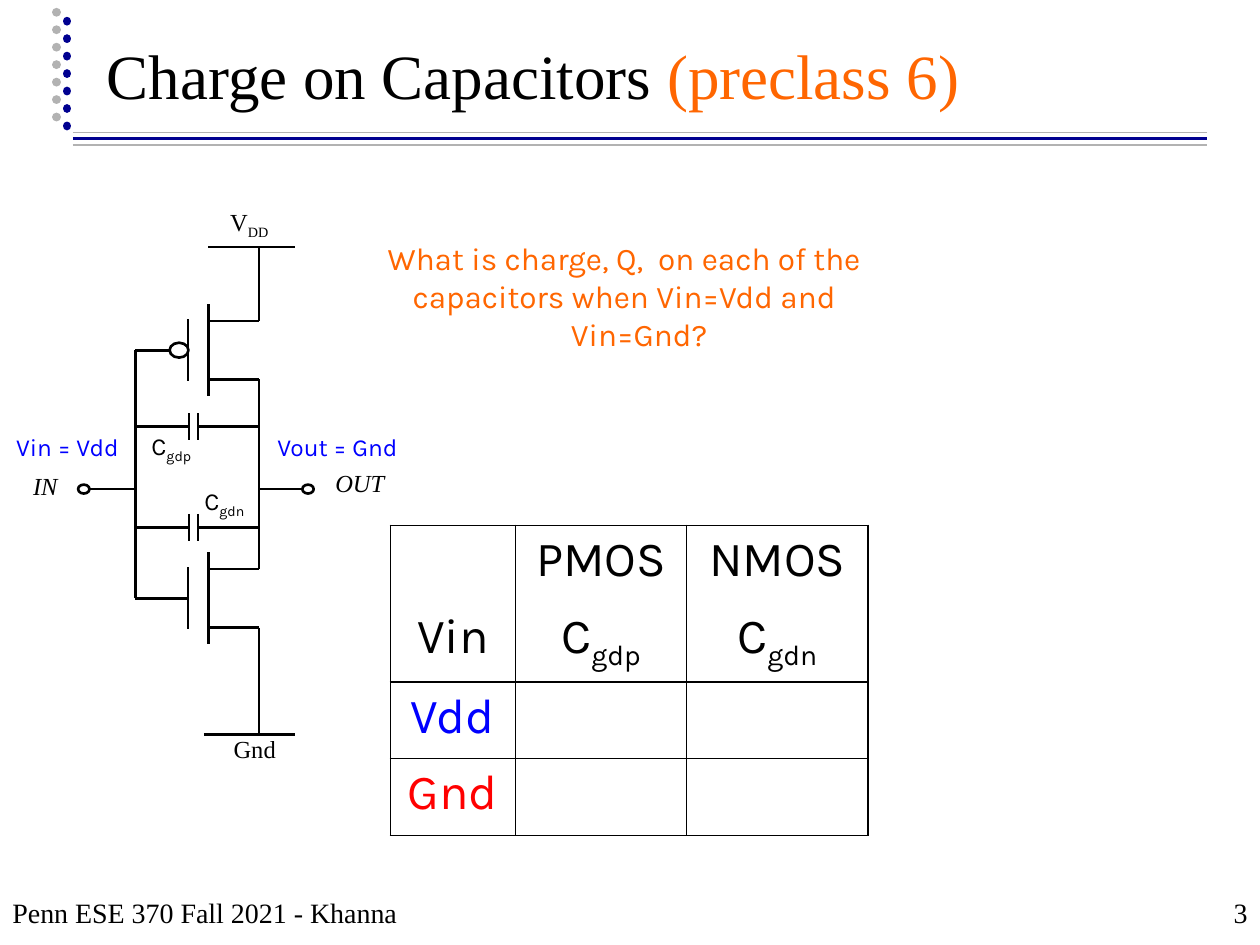
from dataclasses import dataclass

from lxml import etree
from pptx import Presentation
from pptx.dml.color import RGBColor
from pptx.enum.dml import MSO_LINE
from pptx.enum.shapes import MSO_CONNECTOR, MSO_SHAPE
from pptx.enum.text import MSO_ANCHOR, PP_ALIGN
from pptx.oxml import parse_xml
from pptx.oxml.ns import nsdecls, qn
from pptx.util import Cm, Pt

STRAIGHT = MSO_CONNECTOR.STRAIGHT
OVAL = MSO_SHAPE.OVAL
DOTS = MSO_LINE.ROUND_DOT
LEFT, MID, RIGHT = PP_ALIGN.LEFT, PP_ALIGN.CENTER, PP_ALIGN.RIGHT
TOP, BOTTOM = MSO_ANCHOR.TOP, MSO_ANCHOR.BOTTOM


@dataclass(frozen=True)
class Theme:
    serif: str = "Times New Roman"
    sans: str = "Karla"
    black: str = "000000"
    white: str = "FFFFFF"
    orange: str = "FF6601"
    blue: str = "0000FF"
    red: str = "FF0000"
    navy: str = "000090"
    gray: str = "B2B2B2"
    head: int = 36
    cell: int = 28
    body: int = 18
    foot: int = 16
    label: int = 14
    wire: float = 1.5


class Board:
    """Style plus the shape tree (slide or group) now being drawn on."""

    def __init__(self, theme, slide):
        self.theme, self.slide, self.shapes = theme, slide, slide.shapes

    def group(self):
        self.shapes = self.slide.shapes.add_group_shape().shapes

    def ungroup(self):
        self.shapes = self.slide.shapes

    def run(self, para, text, size, font=None, color=None, italic=False, sub=False):
        run = para.add_run()
        run.text = text
        run.font.size = Pt(size)
        run.font.name = font or self.theme.serif
        run.font.italic = italic
        run.font.color.rgb = RGBColor.from_string(color or self.theme.black)
        if sub:
            run.font._element.set("baseline", "-25000")

    def title(self, box, parts):
        shape = self.slide.shapes.title
        shape.left, shape.top, shape.width, shape.height = map(Cm, box)
        frame = shape.text_frame
        frame.vertical_anchor = BOTTOM
        para = frame.paragraphs[0]
        para.alignment = LEFT
        for text, color in parts:
            self.run(para, text, self.theme.head, color=color)

    def text(self, box, text, size, align=MID, anchor=TOP, wrap=True, sub="", **style):
        frame = self.shapes.add_textbox(*map(Cm, box)).text_frame
        frame.word_wrap = wrap
        frame.vertical_anchor = anchor
        para = frame.paragraphs[0]
        para.alignment = align
        self.run(para, text, size, **style)
        if sub:
            self.run(para, sub, size, sub=True, **style)
        return frame

    def line(self, x1, y1, x2, y2, color=None, width=None, dots=False):
        wire = self.shapes.add_connector(STRAIGHT, Cm(x1), Cm(y1), Cm(x2), Cm(y2))
        wire.line.color.rgb = RGBColor.from_string(color or self.theme.black)
        wire.line.width = Pt(width or self.theme.wire)
        if dots:
            wire.line.dash_style = DOTS
            wire.line._ln.set("cap", "rnd")
        etree.SubElement(wire._element.spPr, qn("a:effectLst"))

    def ring(self, x, y, wide, high):
        """Draw a hollow ellipse centred on x, y."""
        ring = self.shapes.add_shape(
            OVAL, Cm(x - wide / 2), Cm(y - high / 2), Cm(wide), Cm(high))
        ring.shadow.inherit = False
        ring.fill.solid()
        ring.fill.fore_color.rgb = RGBColor.from_string(self.theme.white)
        ring.line.color.rgb = RGBColor.from_string(self.theme.black)
        ring.line.width = Pt(self.theme.wire)

    def edge(self, cell, hide):
        """Rule the cell in black, leaving out the sides named in hide."""
        ink = f'<a:solidFill><a:srgbClr val="{self.theme.black}"/></a:solidFill>'
        for spot, side in enumerate("LRTB"):
            paint = "<a:noFill/>" if side in hide else ink
            cell._tc.get_or_add_tcPr().insert(spot, parse_xml(
                f'<a:ln{side} {nsdecls("a")} w="12700">{paint}</a:ln{side}>'))

    def table(self, left, top, cols, high, rows):
        """Rows hold (text, subscript, color) cells; the first two form the header."""
        grid = self.shapes.add_table(len(rows), len(cols), Cm(left), Cm(top),
                                     Cm(sum(cols)), Cm(high * len(rows))).table
        grid.first_row = grid.horz_banding = False
        for col, wide in zip(grid.columns, cols):
            col.width = Cm(wide)
        for r, row in enumerate(rows):
            grid.rows[r].height = Cm(high)
            for c, (text, sub, color) in enumerate(row):
                cell = grid.cell(r, c)
                cell.fill.solid()
                cell.fill.fore_color.rgb = RGBColor.from_string(self.theme.white)
                self.edge(cell, {0: "B", 1: "T"}.get(r, ""))
                para = cell.text_frame.paragraphs[0]
                para.alignment = MID
                style = dict(size=self.theme.cell, font=self.theme.sans, color=color)
                if text:
                    self.run(para, text, **style)
                if sub:
                    self.run(para, sub, sub=True, **style)


BUS, GATE, BODY, OUT = 2.73, 3.79, 4.2, 5.22
SUPPLY, GROUND, PORT = 4.98, 14.81, 9.86
PMOS, NMOS, TAP = 7.06, 12.06, 0.59


def frame(board):
    t = board.theme
    board.group()
    for y, color, width in ((2.79, t.navy, 2), (2.92, t.gray, 1), (2.67, t.gray, 1)):
        board.line(1.47, y, 24.33, y, color, width)
    board.ungroup()
    for x, low, color in ((1.14, 2.36, t.gray), (1.35, 2.54, t.navy)):
        board.line(x, low, x, low - 2.34, color, 5, dots=True)


def mos(board, y):
    board.line(GATE, y - 0.62, GATE, y + 0.62)
    board.line(BODY, y - 0.93, BODY, y + 0.93)
    board.line(BUS, y, GATE, y)
    for tap in (y - TAP, y + TAP):
        board.line(BODY, tap, OUT, tap)


def cap(board, y):
    near, far = 3.81, 3.99
    for x in (near, far):
        board.line(x, y - 0.27, x, y + 0.27)
    board.line(BUS, y, near, y)
    board.line(far, y, OUT, y)


def circuit(board):
    t = board.theme
    board.group()
    board.line(BODY, SUPPLY, 5.94, SUPPLY)
    board.line(4.11, GROUND, 5.94, GROUND)
    for y in (PMOS, NMOS):
        mos(board, y)
    for y in (8.6, 10.63):
        cap(board, y)
    board.line(BUS, PMOS, BUS, NMOS)
    for top, end in ((SUPPLY, PMOS - TAP), (PMOS + TAP, NMOS - TAP),
                     (NMOS + TAP, GROUND)):
        board.line(OUT, top, OUT, end)
    board.line(1.69, PORT, BUS, PORT)
    board.line(OUT, PORT, 6.21, PORT)
    board.ring(3.61, PMOS, 0.38, 0.3)
    for x in (1.69, 6.21):
        board.ring(x, PORT, 0.23, 0.18)
    for x, y, wide, text, sub, font, italic in (
            (4.11, 4.04, 1.83, "V", "DD", t.serif, False),
            (4.22, 14.68, 1.83, "Gnd", "", t.serif, False),
            (0, 9.37, 1.83, "IN", "", t.serif, True),
            (6.1, 9.32, 2.31, "OUT", "", t.serif, True),
            (2.54, 8.56, 1.83, "C", "gdp", t.sans, False),
            (3.61, 9.68, 1.83, "C", "gdn", t.sans, False)):
        board.text((x, y, wide, 0.89), text, t.label, sub=sub, font=font,
                   italic=italic)
    board.ungroup()


def main():
    deck = Presentation()
    deck.slide_width, deck.slide_height = Cm(25.4), Cm(19.05)
    t = Theme()
    board = Board(t, deck.slides.add_slide(deck.slide_layouts[5]))

    frame(board)
    board.title((1.9, 0.28, 21.64, 2.11),
                (("Charge on Capacitors ", t.black), ("(preclass 6)", t.orange)))
    board.text((0, 17.58, 13.77, 1.27), "Penn ESE 370 Fall 2021 - Khanna",
               t.foot, LEFT, BOTTOM)
    board.text((20.12, 17.58, 5.28, 1.27), "3", t.foot, RIGHT, BOTTOM)

    style = dict(size=t.body, font=t.sans, color=t.orange)
    ask = board.text(
        (6.35, 4.7, 12.47, 2.57),
        "What is charge, Q,  on each of the capacitors when Vin=Vdd and", **style)
    para = ask.add_paragraph()
    para.alignment = MID
    para._p.get_or_add_pPr().set("marL", str(Cm(0.6)))
    board.run(para, "Vin=Gnd?", **style)

    circuit(board)
    blank = ("", "", t.black)
    board.table(7.87, 10.59, (2.52, 3.45, 3.66), 1.55, (
        (blank, ("PMOS", "", t.black), ("NMOS", "", t.black)),
        (("Vin", "", t.black), ("C", "gdp", t.black), ("C", "gdn", t.black)),
        (("Vdd", "", t.blue), blank, blank),
        (("Gnd", "", t.red), blank, blank)))
    for x, wide, text in ((0, 2.72, "Vin = Vdd"), (5.28, 3.05, "Vout = Gnd")):
        board.text((x, 8.59, wide, 0.86), text, t.label, wrap=False,
                   font=t.sans, color=t.blue)
    deck.save("out.pptx")


if __name__ == "__main__":
    main()
